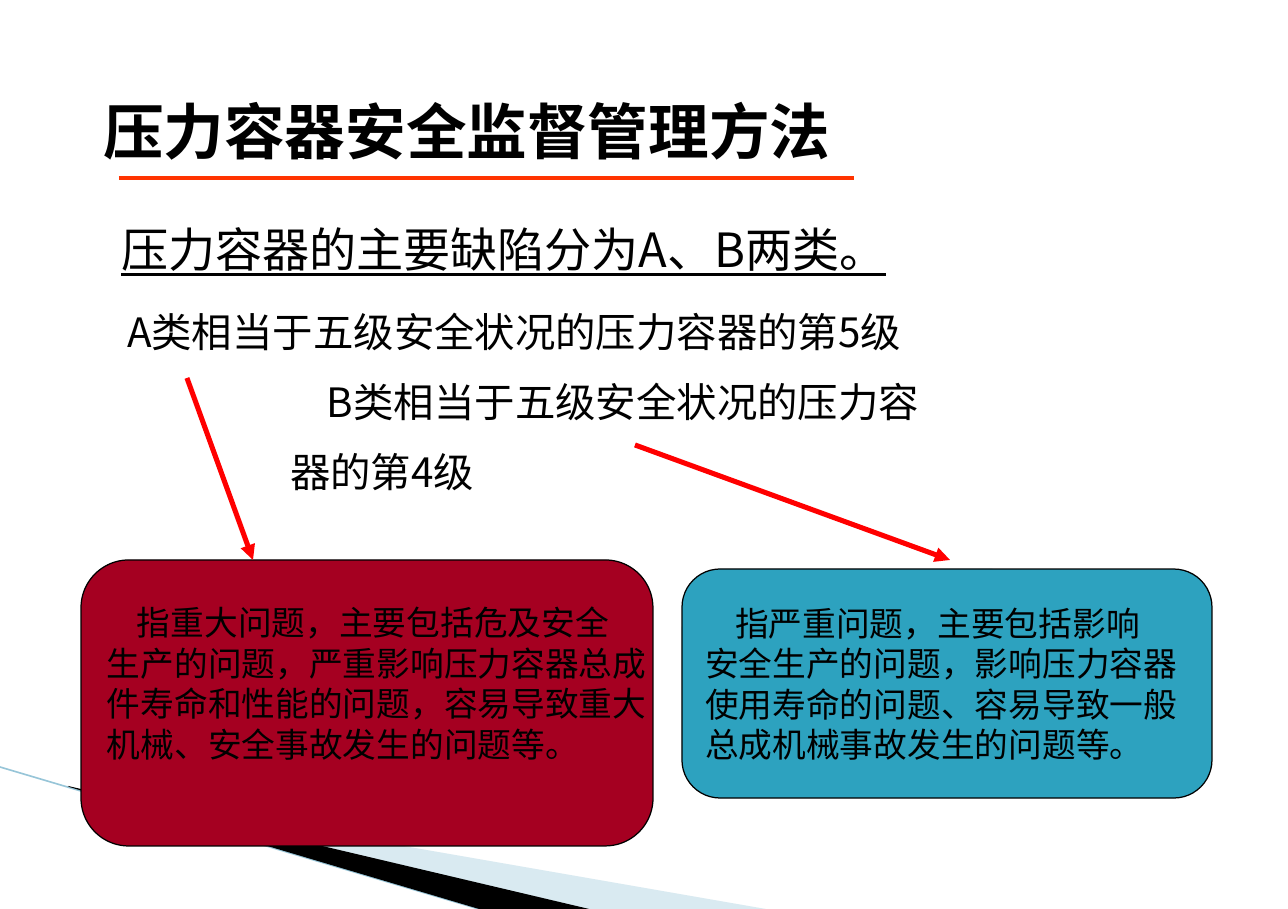
from lxml import etree
from pptx import Presentation
from pptx import util as u
from pptx.dml.color import RGBColor
from pptx.enum import shapes, text
from pptx.oxml.ns import qn

PX = 914400 / 121.2
CJK = "Noto Sans CJK SC"


def px(*lengths):
    return [round(n * PX) for n in lengths]


def write(frame, lines, size, font=CJK, bold=False, underline=False,
          pitch=None, before=0, indents=None, first=0):
    """Fill a frame; indents holds the left indent of each line in px."""
    for i, line in enumerate(lines):
        p = frame.paragraphs[0] if i == 0 else frame.add_paragraph()
        p.alignment = text.PP_ALIGN.LEFT
        p.space_before = u.Pt(before if i == 1 else 0)
        if pitch:
            p.line_spacing = u.Pt(pitch)
        indent = indents[i] if indents else (first if i == 0 else 0)
        pPr = p._p.get_or_add_pPr()
        pPr.set("marL", "0")
        pPr.set("indent", str(px(indent)[0]))
        run = p.add_run()
        run.text = line
        run.font.size = u.Pt(underline and i == 0 and 28 or size)
        run.font.name = font
        run.font.bold = bold
        run.font.underline = underline and i == 0
        run.font.color.rgb = RGBColor.from_string("000000")
        ea = etree.SubElement(run.font._element, qn("a:ea"))
        ea.set("typeface", CJK)


prs = Presentation()
prs.slide_width, prs.slide_height = px(1288, 909)
slide = prs.slides.add_slide(prs.slide_layouts[5])

# Corner decoration
swooshes = [
    ([(70, 788), (766, 909), (588, 909), (70, 787)], "A0CBDC", 40),
    ([(68, 786), (589, 909), (479, 909), (69, 787)], "000000", 100),
]
for points, color, opacity in swooshes:
    builder = slide.shapes.build_freeform(*points[0], scale=PX)
    builder.add_line_segments(points[1:], close=True)
    swoosh = builder.convert_to_shape()
    swoosh.shadow.inherit = False
    swoosh.line.fill.background()
    swoosh.fill.solid()
    swoosh.fill.fore_color.rgb = RGBColor.from_string(color)
    if opacity < 100:
        tint = swoosh._element.spPr.find(".//" + qn("a:srgbClr"))
        etree.SubElement(tint, qn("a:alpha")).set("val", str(opacity * 1000))

# Title
title = slide.shapes.title
title.left, title.top, title.width, title.height = px(91, 63, 781, 135)
title.text_frame.vertical_anchor = text.MSO_ANCHOR.MIDDLE
title.text_frame.auto_size = text.MSO_AUTO_SIZE.NONE
write(title.text_frame, ["压力容器安全监督管理方法"], 36, font="Courier New", bold=True)

# Defect classes
classes = slide.shapes.add_textbox(*px(76, 207, 1136, 300)).text_frame
classes.word_wrap = True
classes.margin_left = classes.margin_right = classes.margin_top = classes.margin_bottom = 0
write(classes, [
    "压力容器的主要缺陷分为A、B两类。",
    "A类相当于五级安全状况的压力容器的第5级",
    "B类相当于五级安全状况的压力容",
    "器的第4级",
], 24, underline=True, pitch=41.6, before=5, indents=[45, 51, 251, 214])

# Explanation of each class
explanations = [
    (shapes.MSO_SHAPE.FLOWCHART_ALTERNATE_PROCESS, (682, 569, 530, 229), "2DA2BF", 0, [
        "指严重问题，主要包括影响",
        "安全生产的问题，影响压力容器",
        "使用寿命的问题、容易导致一般",
        "总成机械事故发生的问题等。",
    ]),
    (shapes.MSO_SHAPE.ROUNDED_RECTANGLE, (81, 560, 572, 286), "A50021", 40, [
        "指重大问题，主要包括危及安全",
        "生产的问题，严重影响压力容器总成",
        "件寿命和性能的问题，容易导致重大",
        "机械、安全事故发生的问题等。",
    ]),
]
for preset, place, color, space_below, lines in explanations:
    card = slide.shapes.add_shape(preset, *px(*place))
    card.shadow.inherit = False
    card.fill.solid()
    card.fill.fore_color.rgb = RGBColor.from_string(color)
    card.line.color.rgb = RGBColor.from_string("000000")
    card.line.width = u.Pt(0.75)
    frame = card.text_frame
    frame.word_wrap = False
    frame.vertical_anchor = text.MSO_ANCHOR.MIDDLE
    frame.margin_top, frame.margin_bottom = px(0, space_below)
    write(frame, lines, 20, pitch=24, first=30)

# Corner line, title rule and arrows from class to explanation
rules = [
    ((0, 767, 479, 909), "97C5D8", 0.95, False),
    ((119, 178, 854, 178), "FF3300", 2.25, False),
    ((187, 378, 253, 560), "FF0000", 3, True),
    ((635, 445, 950, 560), "FF0000", 3, True),
]
for ends, color, width, arrow in rules:
    rule = slide.shapes.add_connector(shapes.MSO_CONNECTOR.STRAIGHT, *px(*ends))
    rule.line.color.rgb = RGBColor.from_string(color)
    rule.line.width = u.Pt(width)
    if arrow:
        etree.SubElement(rule.line._get_or_add_ln(), qn("a:tailEnd")).set("type", "triangle")
    etree.SubElement(rule._element.spPr, qn("a:effectLst"))
    if ends[0] == 0:
        slide.shapes._spTree.insert(4, rule._element)

prs.save("out.pptx")
